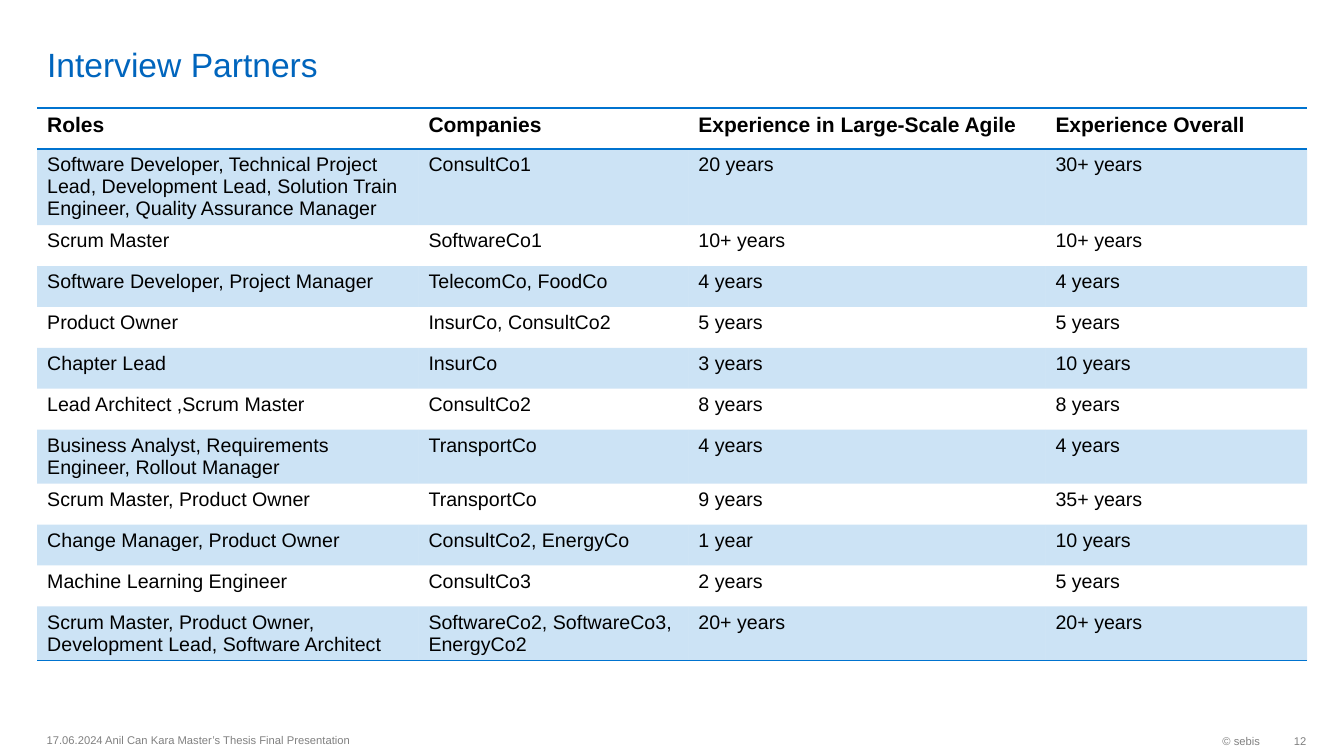
from lxml import etree
from pptx import Presentation
from pptx.dml.color import RGBColor
from pptx.enum import text
from pptx.oxml.ns import qn
from pptx.util import Pt

BLUE = "0073CF"


def style_run(p, words, size, color, bold=False):
    r = p.add_run()
    r.text = words
    r.font.name = "Arial"
    r.font.size = Pt(size)
    r.font.bold = bold
    r.font.color.rgb = RGBColor.from_string(color)


def add_rule(cell, side):
    ln = etree.SubElement(cell._tc.get_or_add_tcPr(), qn("a:" + side), w=str(Pt(1)))
    fill = etree.SubElement(ln, qn("a:solidFill"))
    etree.SubElement(fill, qn("a:srgbClr"), val=BLUE)


prs = Presentation()
prs.slide_width, prs.slide_height = Pt(960), Pt(540)
s = prs.slides.add_slide(prs.slide_layouts[6])

# Interview table
rows = [
    ("Roles", "Companies", "Experience in Large-Scale Agile", "Experience Overall"),
    ("Software Developer, Technical Project Lead, Development Lead, "
     "Solution Train Engineer, Quality Assurance Manager",
     "ConsultCo1", "20 years", "30+ years"),
    ("Scrum Master", "SoftwareCo1", "10+ years", "10+ years"),
    ("Software Developer, Project Manager", "TelecomCo, FoodCo", "4 years", "4 years"),
    ("Product Owner", "InsurCo, ConsultCo2", "5 years", "5 years"),
    ("Chapter Lead", "InsurCo", "3 years", "10 years"),
    ("Lead Architect ,Scrum Master", "ConsultCo2", "8 years", "8 years"),
    ("Business Analyst, Requirements Engineer, Rollout Manager",
     "TransportCo", "4 years", "4 years"),
    ("Scrum Master, Product Owner", "TransportCo", "9 years", "35+ years"),
    ("Change Manager, Product Owner", "ConsultCo2, EnergyCo", "1 year", "10 years"),
    ("Machine Learning Engineer", "ConsultCo3", "2 years", "5 years"),
    ("Scrum Master, Product Owner, Development Lead, Software Architect",
     "SoftwareCo2, SoftwareCo3, EnergyCo2", "20+ years", "20+ years"),
]
widths = [272.4, 192.8, 255.1, 186.9]
row_height = 29.2
table = s.shapes.add_table(len(rows), len(widths), Pt(26.5), Pt(77.2),
                           Pt(sum(widths)), Pt(row_height * len(rows))).table
table.horz_banding = False
# Plain style without grid lines
table._tbl.tblPr.find(qn("a:tableStyleId")).text = "{2D5ABB26-0587-4C30-8999-92F81FD0307C}"
for column, width in zip(table.columns, widths):
    column.width = Pt(width)

for i, row in enumerate(rows):
    table.rows[i].height = Pt(row_height)
    header, last = i == 0, i == len(rows) - 1
    for j, words in enumerate(row):
        cell = table.cell(i, j)
        style_run(cell.text_frame.paragraphs[0], words, 15 if header else 14, "000000", header)
        if header:
            add_rule(cell, "lnT")
        if header or last:
            add_rule(cell, "lnB")
        if i % 2:
            cell.fill.solid()
            cell.fill.fore_color.rgb = RGBColor.from_string(BLUE)
            tint = cell._tc.tcPr.find(qn("a:solidFill")).find(qn("a:srgbClr"))
            etree.SubElement(tint, qn("a:alpha"), val="20000")
        else:
            cell.fill.background()

# Title and footer: words, box, size, colour, alignment, anchor, wrap, insets
left, right = text.PP_ALIGN.LEFT, text.PP_ALIGN.RIGHT
bottom, middle = text.MSO_ANCHOR.BOTTOM, text.MSO_ANCHOR.MIDDLE
labels = [
    ("Interview Partners", (26.5, 3.6, 833.8, 56.9), 24, "0065BD",
     left, bottom, True, (7.2, 0, 7.2, 0)),
    ("© sebis", (738.7, 517.7, 168.5, 23), 8, "808080",
     right, middle, False, (7.2, 3.6, 7.2, 3.6)),
    ("17.06.2024 Anil Can Kara Master’s Thesis Final Presentation",
     (26.2, 517.2, 453.6, 23), 8, "808080",
     left, middle, True, (7.2, 3.6, 7.2, 3.6)),
    ("12", (907.2, 517.7, 26, 23), 8, "808080",
     right, middle, False, (7.2, 3.6, 0, 3.6)),
]
for words, box, size, color, align, anchor, wrap, insets in labels:
    tf = s.shapes.add_textbox(*map(Pt, box)).text_frame
    tf.word_wrap = wrap
    tf.vertical_anchor = anchor
    tf.margin_left, tf.margin_top, tf.margin_right, tf.margin_bottom = map(Pt, insets)
    p = tf.paragraphs[0]
    p.alignment = align
    style_run(p, words, size, color)

prs.save("out.pptx")
